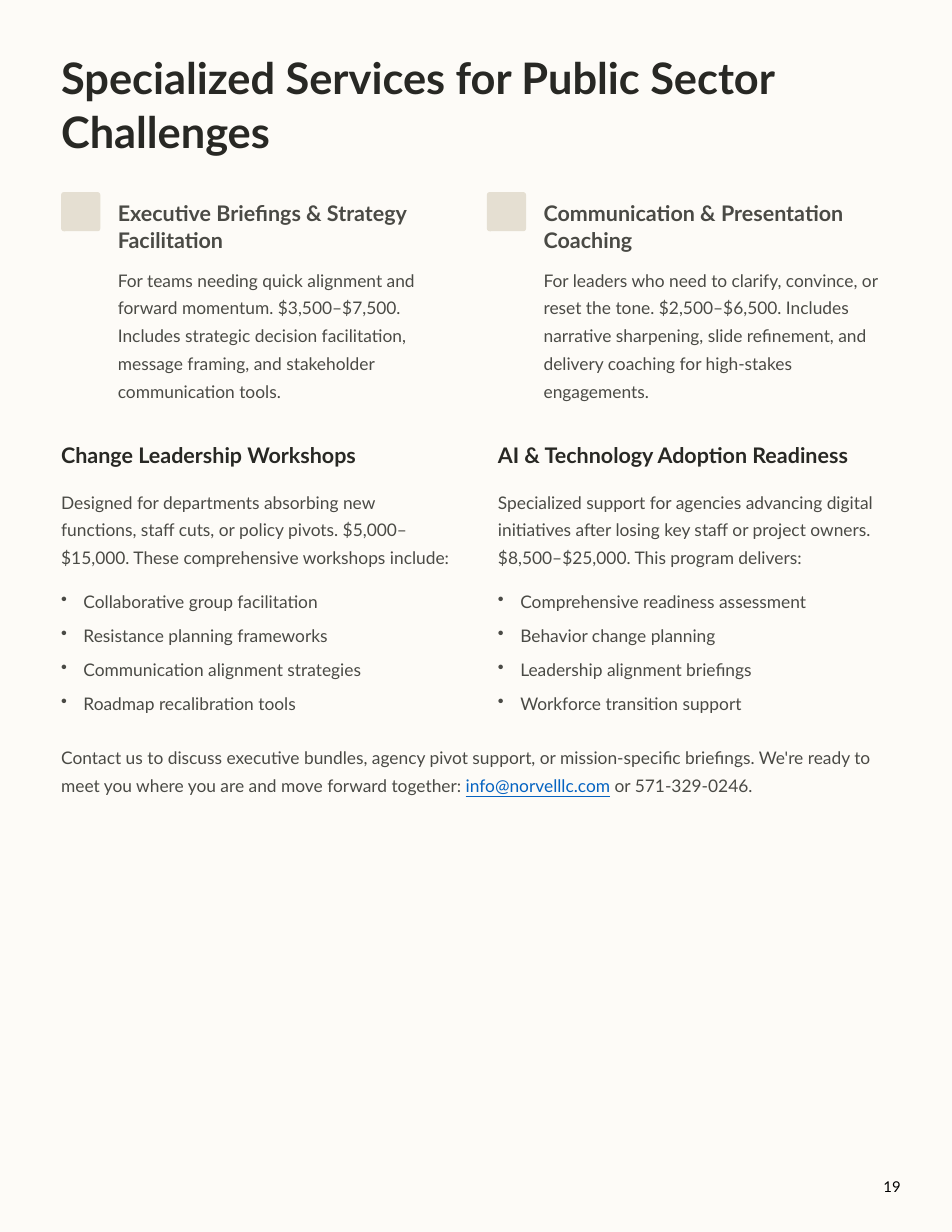
import pptx
import pptx.util
import pptx.dml.color
import pptx.enum.shapes
import pptx.oxml.ns
from dataclasses import dataclass
from lxml import etree

Pt = pptx.util.Pt

TITLE = ["Specialized Services for Public Sector", "Challenges"]
SERVICES = [
    ("Executive Briefings & Strategy Facilitation",
     "For teams needing quick alignment and forward momentum. $3,500–$7,500. "
     "Includes strategic decision facilitation, message framing, and stakeholder "
     "communication tools."),
    ("Communication & Presentation Coaching",
     "For leaders who need to clarify, convince, or reset the tone. $2,500–$6,500. "
     "Includes narrative sharpening, slide refinement, and delivery coaching for "
     "high-stakes engagements."),
]
PROGRAMS = [
    ("Change Leadership Workshops",
     "Designed for departments absorbing new functions, staff cuts, or policy pivots. "
     "$5,000–$15,000. These comprehensive workshops include:",
     ["Collaborative group facilitation", "Resistance planning frameworks",
      "Communication alignment strategies", "Roadmap recalibration tools"]),
    ("AI & Technology Adoption Readiness",
     "Specialized support for agencies advancing digital initiatives after losing key "
     "staff or project owners. $8,500–$25,000. This program delivers:",
     ["Comprehensive readiness assessment", "Behavior change planning",
      "Leadership alignment briefings", "Workforce transition support"]),
]
CONTACT = [
    ("Contact us to discuss executive bundles, agency pivot support, or mission-specific "
     "briefings. We're ready to meet you where you are and move forward together: ", False),
    ("info@norvelllc.com", True),
    (" or 571-329-0246.", False),
]
PAGE_NUMBER = "19"


@dataclass(frozen=True)
class Style:
    size: float
    color: str
    leading: float = None
    bold: bool = False


@dataclass(frozen=True)
class Theme:
    font: str = "Lato"
    background: str = "FDFBF7"
    icon: str = "E5DFD2"
    link: str = "0563C1"
    title: Style = Style(52.5, "282824", 66, True)
    service: Style = Style(26, "4A4A45", 33, True)
    program: Style = Style(26, "282824", 33, True)
    body: Style = Style(21, "4A4A45", 33.5)
    number: Style = Style(18, "000000")


THEME = Theme()
PAGE_WIDTH, PAGE_HEIGHT = 1152, 1491
LEFT, CONTENT_WIDTH = 74, 1004.6
SERVICE_GAP, PROGRAM_GAP = 25.8, 52.6
ICON, TEXT_INDENT = 47.4, 68.6
BULLET_INDENT, BULLET_GAP = 27, 7.75


def rgb(value):
    return pptx.dml.color.RGBColor.from_string(value)


def columns(items, gap):
    width = (CONTENT_WIDTH - gap * (len(items) - 1)) / len(items)
    return [(LEFT + index * (width + gap), width, item) for index, item in enumerate(items)]


def add_bullet(para):
    properties = para._p.get_or_add_pPr()
    properties.set("marL", str(Pt(BULLET_INDENT)))
    properties.set("indent", str(-Pt(BULLET_INDENT)))
    bullet = etree.SubElement(properties, pptx.oxml.ns.qn("a:buChar"))
    bullet.set("char", "•")


def add_text(page, left, top, width, height, paragraphs, style, bullets=False, inset=0):
    box = page.shapes.add_textbox(Pt(left), Pt(top), Pt(width), Pt(height))
    frame = box.text_frame
    frame.word_wrap = True
    frame.margin_left = frame.margin_right = Pt(inset)
    frame.margin_top = frame.margin_bottom = Pt(inset / 2)
    for index, content in enumerate(paragraphs):
        para = frame.add_paragraph() if index else frame.paragraphs[0]
        if bullets:
            add_bullet(para)
            if index:
                para.space_before = Pt(BULLET_GAP)
        if style.leading:
            para.line_spacing = Pt(style.leading)
        para.font.name = THEME.font
        para.font.size = Pt(style.size)
        para.font.bold = style.bold
        para.font.color.rgb = rgb(style.color)
        spans = [(content, False)] if isinstance(content, str) else content
        for text, is_link in spans:
            span = para.add_run()
            span.text = text
            if is_link:
                span.font.color.rgb = rgb(THEME.link)
                span.font.underline = True


def add_icon(page, left, top):
    icon = page.shapes.add_shape(
        pptx.enum.shapes.MSO_SHAPE.ROUNDED_RECTANGLE, Pt(left), Pt(top), Pt(ICON), Pt(ICON))
    icon.adjustments[0] = 0.07
    icon.shadow.inherit = False
    icon.fill.solid()
    icon.fill.fore_color.rgb = rgb(THEME.icon)
    icon.line.fill.background()


def main():
    deck = pptx.Presentation()
    deck.slide_width, deck.slide_height = Pt(PAGE_WIDTH), Pt(PAGE_HEIGHT)
    page = deck.slides.add_slide(deck.slide_layouts[6])
    page.background.fill.solid()
    page.background.fill.fore_color.rgb = rgb(THEME.background)

    add_text(page, LEFT, 58.4, 1024, 132, TITLE, THEME.title)

    for left, width, (heading, body) in columns(SERVICES, SERVICE_GAP):
        add_icon(page, left, 232.5)
        text_left, text_width = left + TEXT_INDENT, width - TEXT_INDENT
        add_text(page, text_left, 240, text_width, 66, [heading], THEME.service)
        add_text(page, text_left, 318.4, text_width, 169, [body], THEME.body)

    for left, width, (heading, body, items) in columns(PROGRAMS, PROGRAM_GAP):
        add_text(page, left, 533, width, 33, [heading], THEME.program)
        add_text(page, left, 586.8, width, 101.5, [body], THEME.body)
        add_text(page, left, 707, width, 158, items, THEME.body, bullets=True)

    add_text(page, LEFT, 895.7, CONTENT_WIDTH, 67.5, [CONTACT], THEME.body)
    add_text(page, 1062, 1421.3, 67.5, 29, [PAGE_NUMBER], THEME.number, inset=7.2)
    deck.save("out.pptx")


if __name__ == "__main__":
    main()
